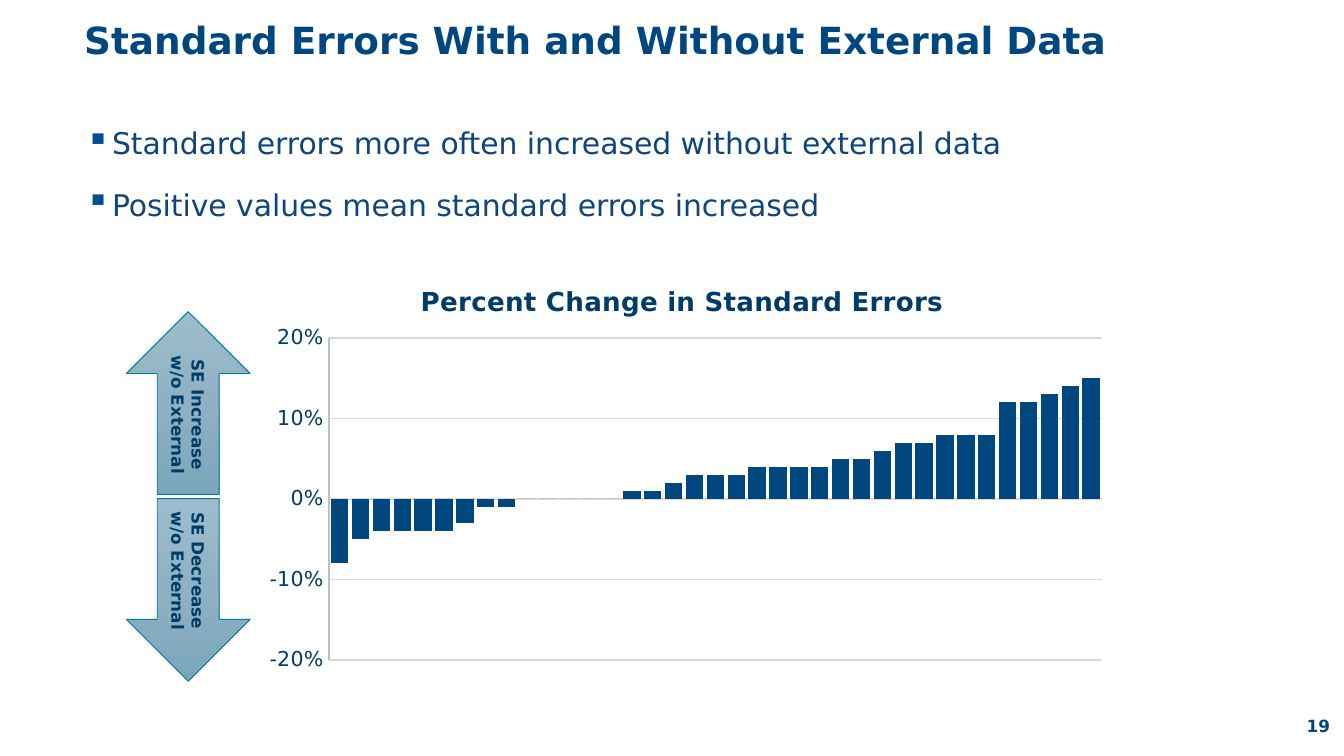
from copy import deepcopy

from lxml import etree
from pptx import Presentation
from pptx.chart.data import CategoryChartData
from pptx.dml.color import RGBColor
from pptx.enum.chart import XL_CHART_TYPE, XL_TICK_MARK
from pptx.enum.shapes import MSO_SHAPE
from pptx.enum.text import MSO_ANCHOR, PP_ALIGN
from pptx.oxml.ns import qn
from pptx.util import Pt

COLUMNS = XL_CHART_TYPE.COLUMN_CLUSTERED
NO_TICK = XL_TICK_MARK.NONE
UP, DOWN = MSO_SHAPE.UP_ARROW, MSO_SHAPE.DOWN_ARROW
MIDDLE = MSO_ANCHOR.MIDDLE
CENTER = PP_ALIGN.CENTER

FONT = "DejaVu Sans"
HEX = {
    "navy": "00467F", "body": "10457A", "bullet": "004F90", "dark": "003C68",
    "axis": "BFBFBF", "grid": "D9D9D9", "edge": "007E9D",
}
SHADES = ["9DBCCD", "90B1C3", "7CA5BB"]
CHANGES = [
    -0.08, -0.05, -0.04, -0.04, -0.04, -0.04, -0.03, -0.01, -0.01,
    0, 0, 0, 0, 0, 0.01, 0.01, 0.02, 0.03, 0.03, 0.03,
    0.04, 0.04, 0.04, 0.04, 0.05, 0.05, 0.06, 0.07, 0.07,
    0.08, 0.08, 0.08, 0.12, 0.12, 0.13, 0.14, 0.15,
]


def color(name):
    return RGBColor.from_string(HEX[name])


def points(box):
    return [Pt(n) for n in box]


def style(font, size, hue, bold=False):
    font.name, font.size, font.bold = FONT, Pt(size), bold
    font.color.rgb = color(hue)


def add_bullet(para):
    props = para._p.get_or_add_pPr()
    props.set("marL", str(Pt(19)))
    props.set("indent", str(Pt(-14)))
    tint = etree.SubElement(props, qn("a:buClr"))
    etree.SubElement(tint, qn("a:srgbClr"), val=HEX["bullet"])
    etree.SubElement(props, qn("a:buSzPct"), val="110000")
    etree.SubElement(props, qn("a:buChar"), char="▪")


def write(frame, lines, size=16, hue="navy", bold=False, align=None,
          spacing=None, before=0, after=0, bullet=False):
    """Fill a text frame with one paragraph for each line."""
    for i, line in enumerate(lines):
        para = frame.add_paragraph() if i else frame.paragraphs[0]
        if align is not None:
            para.alignment = align
        if spacing:
            para.line_spacing = spacing
        if before and i:
            para.space_before = Pt(before)
        if after:
            para.space_after = Pt(after)
        if bullet:
            add_bullet(para)
        run = para.add_run()
        run.text = line
        style(run.font, size, hue, bold)


def add_text(slide, box, lines, anchor=None, left=7.2, **form):
    frame = slide.shapes.add_textbox(*points(box)).text_frame
    frame.word_wrap = True
    frame.margin_left = Pt(left)
    if anchor is not None:
        frame.vertical_anchor = anchor
    write(frame, lines, **form)


def set_layout(part, index, **sizes):
    """Place a chart part by fractions of the chart area."""
    for old in part.findall(qn("c:layout")):
        part.remove(old)
    layout = etree.Element(qn("c:layout"))
    part.insert(index, layout)
    manual = etree.SubElement(layout, qn("c:manualLayout"))
    if "w" in sizes:
        etree.SubElement(manual, qn("c:layoutTarget"), val="inner")
    for key in "xy":
        etree.SubElement(manual, qn(f"c:{key}Mode"), val="edge")
    for key, size in sizes.items():
        etree.SubElement(manual, qn(f"c:{key}"), val=str(size))


def add_bars(slide, box):
    data = CategoryChartData(number_format="0%")
    data.categories = [str(i + 1) for i in range(len(CHANGES))]
    data.add_series("Series 1", CHANGES)
    chart = slide.shapes.add_chart(COLUMNS, *points(box), data).chart
    style(chart.font, 10, "dark")
    chart.has_legend = False

    title = chart.chart_title
    write(title.text_frame, ["Percent Change in Standard Errors"],
          size=14, hue="dark", bold=True)
    set_layout(title._element, 1, x=0.19, y=0.05)
    area = chart._chartSpace.find(".//" + qn("c:plotArea"))
    set_layout(area, 0, x=0.09, y=0.19, w=0.89, h=0.76)

    plot = chart.plots[0]
    plot.gap_width, plot.overlap = 20, 50
    plot.vary_by_categories = False
    bars = plot.series[0]
    bars.invert_if_negative = False
    bars.format.fill.solid()
    bars.format.fill.fore_color.rgb = color("navy")

    chart.category_axis.visible = False
    axis = chart.value_axis
    axis.minimum_scale, axis.maximum_scale, axis.major_unit = -0.2, 0.2, 0.1
    axis.major_tick_mark = axis.minor_tick_mark = NO_TICK
    axis.tick_labels.number_format = "0%"
    axis.tick_labels.number_format_is_linked = False
    style(axis.tick_labels.font, 11, "dark")
    for line, hue in ((axis.format.line, "axis"),
                      (axis.major_gridlines.format.line, "grid")):
        line.color.rgb = color(hue)
        line.width = Pt(0.75)


def add_arrow(slide, box, kind, lines):
    shape = slide.shapes.add_shape(kind, *points(box))
    shape.shadow.inherit = False
    shape.line.color.rgb = color("edge")
    shape.line.width = Pt(0.5)
    fill = shape.fill
    fill.gradient()
    fill.gradient_angle = 270
    stops = shape._element.spPr.find(".//" + qn("a:gsLst"))
    stops.append(deepcopy(stops[0]))
    for i, (stop, shade) in enumerate(zip(fill.gradient_stops, SHADES)):
        stop.position = i / 2
        stop.color.rgb = RGBColor.from_string(shade)
    frame = shape.text_frame
    frame.vertical_anchor = MIDDLE
    frame._txBody.bodyPr.set("vert", "eaVert")
    write(frame, lines, size=9, hue="dark", bold=True, align=CENTER)


def add_arrows(slide, box):
    """Stack the two arrows in the box with a small gap between them."""
    left, top, width, height = box
    gap = 2.2
    tall = (height - gap) / 2
    for i, (kind, word) in enumerate(((UP, "Increase"), (DOWN, "Decrease"))):
        add_arrow(slide, (left, top + i * (tall + gap), width, tall), kind,
                  [f"SE {word}", "w/o External"])


def main():
    deck = Presentation()
    deck.slide_width, deck.slide_height = Pt(720), Pt(405)
    slide = deck.slides.add_slide(deck.slide_layouts[6])
    add_text(slide, (38, 0, 660, 45),
             ["Standard Errors With and Without External Data"],
             anchor=MIDDLE, size=20, bold=True, spacing=0.9)
    add_text(slide, (34, 63.5, 660, 301),
             ["Standard errors more often increased without external data",
              "Positive values mean standard errors increased"],
             hue="body", before=7.5, after=6, bullet=True)
    add_text(slide, (700, 378, 25, 21.5), ["19"],
             anchor=MIDDLE, left=0, size=9, bold=True)
    add_bars(slide, (134.5, 138, 465, 227))
    add_arrows(slide, (67.7, 167, 66.3, 198))
    deck.save("out.pptx")


if __name__ == "__main__":
    main()
